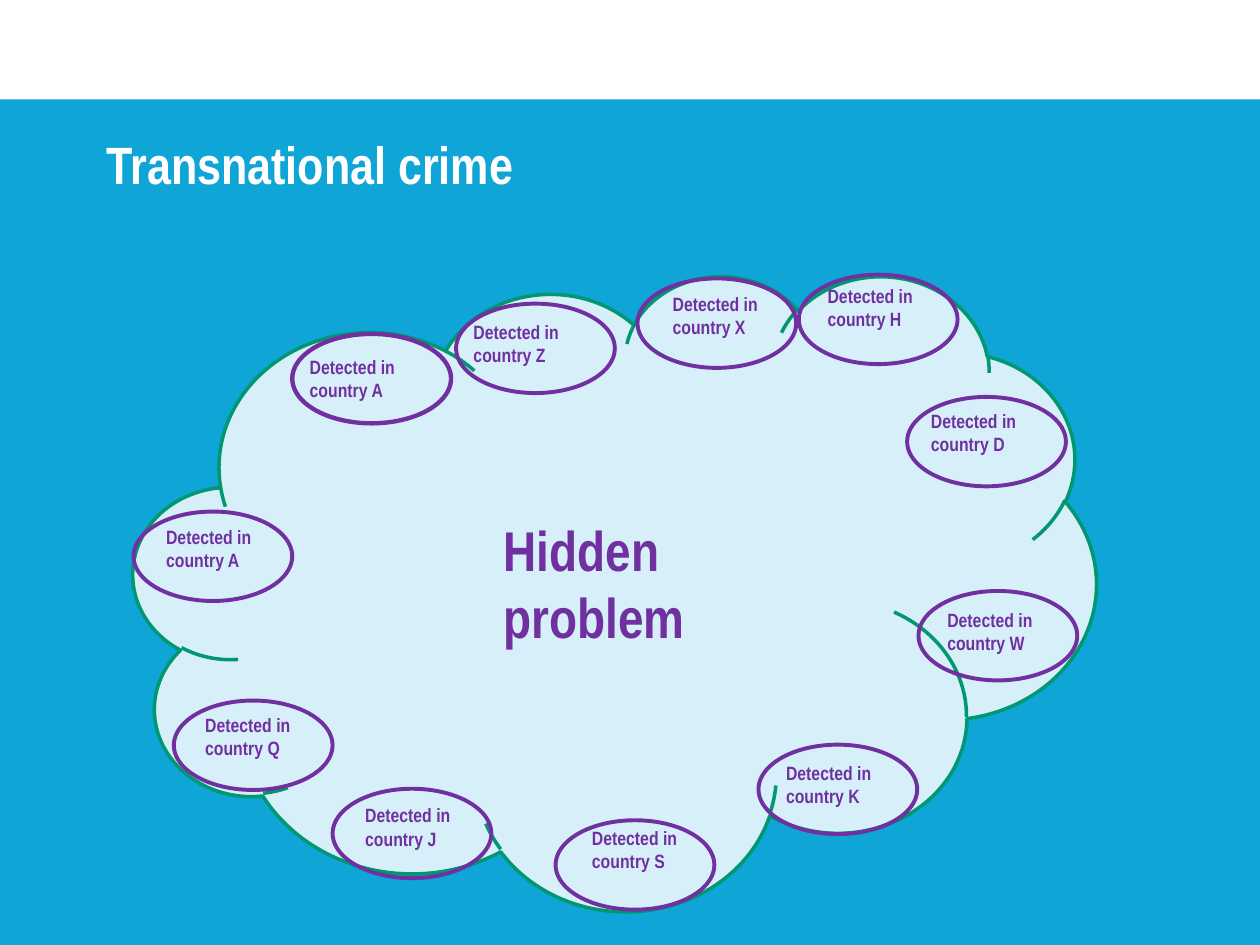
"""Build the transnational crime slide: a cloud ringed by detected cases."""
from lxml import etree
from pptx import Presentation
from pptx.dml.color import RGBColor
from pptx.enum import shapes, text
from pptx.oxml import ns
from pptx.util import Inches, Pt

WHITE, PURPLE = "FFFFFF", "7030A0"


def paint(fill, color):
    fill.solid()
    fill.fore_color.rgb = RGBColor.from_string(color)


def write(words, box, size, color, anchor=text.MSO_ANCHOR.TOP):
    label = slide.shapes.add_textbox(*map(Inches, box))
    frame = label.text_frame
    for key, value in {"word_wrap": True, "vertical_anchor": anchor}.items():
        setattr(frame, key, value)
    frame.text = words
    font = frame.paragraphs[0].runs[0].font
    look = {"name": "Arial Narrow", "size": Pt(size), "bold": True}
    for key, value in look.items():
        setattr(font, key, value)
    paint(font.fill, color)


deck = Presentation()
deck.slide_width, deck.slide_height = Inches(10), Inches(7.5)
slide = deck.slides.add_slide(deck.slide_layouts[6])
paint(slide.background.fill, "0FA6D7")

kind = shapes.MSO_SHAPE
band = slide.shapes.add_shape(kind.RECTANGLE, *map(Inches, (0, -0.19, 10, 0.98)))
band.shadow.inherit = False
paint(band.fill, WHITE)
band.line.fill.background()

write("Transnational crime", (0.75, 0.67, 8.5, 1.25), 30, WHITE, text.MSO_ANCHOR.MIDDLE)

cloud = slide.shapes.add_shape(kind.CLOUD, *map(Inches, (1.06, 2.18, 7.64, 5.04)))
cloud.shadow.inherit = False
paint(cloud.fill, WHITE)
tint = cloud.fill._xPr.find(".//" + ns.qn("a:srgbClr"))
etree.SubElement(tint, ns.qn("a:alpha"), val="83000")
paint(cloud.line.fill, "009771")
cloud.line.width = Pt(2)

cases = [
    ("A", (2.32, 2.65), (2.36, 2.77), 2.5),
    ("Z", (3.62, 2.41), (3.66, 2.49), 2.25),
    ("X", (5.06, 2.21), (5.24, 2.27), 2.25),
    ("H", (6.34, 2.18), (6.47, 2.21), 2.25),
    ("D", (7.2, 3.15), (7.29, 3.2), 2.25),
    ("W", (7.29, 4.69), (7.42, 4.78), 2.25),
    ("K", (6.02, 5.91), (6.14, 5.99), 2.25),
    ("S", (4.41, 6.51), (4.6, 6.51), 2.25),
    ("J", (2.64, 6.26), (2.8, 6.33), 2.25),
    ("Q", (1.38, 5.56), (1.53, 5.61), 2.25),
    ("A", (1.06, 4.06), (1.22, 4.12), 2.25),
]
for _, spot, _, width in cases:
    ring = slide.shapes.add_shape(kind.OVAL, *map(Inches, (*spot, 1.26, 0.71)))
    ring.shadow.inherit = False
    ring.fill.background()
    paint(ring.line.fill, PURPLE)
    ring.line.width = Pt(width)

for land, _, spot, _ in cases:
    write(f"Detected in country {land}", (*spot, 1.26, 0.66), 11, PURPLE)

write("Hidden problem", (3.9, 4.04, 1.96, 1.36), 32, PURPLE)

deck.save("out.pptx")
